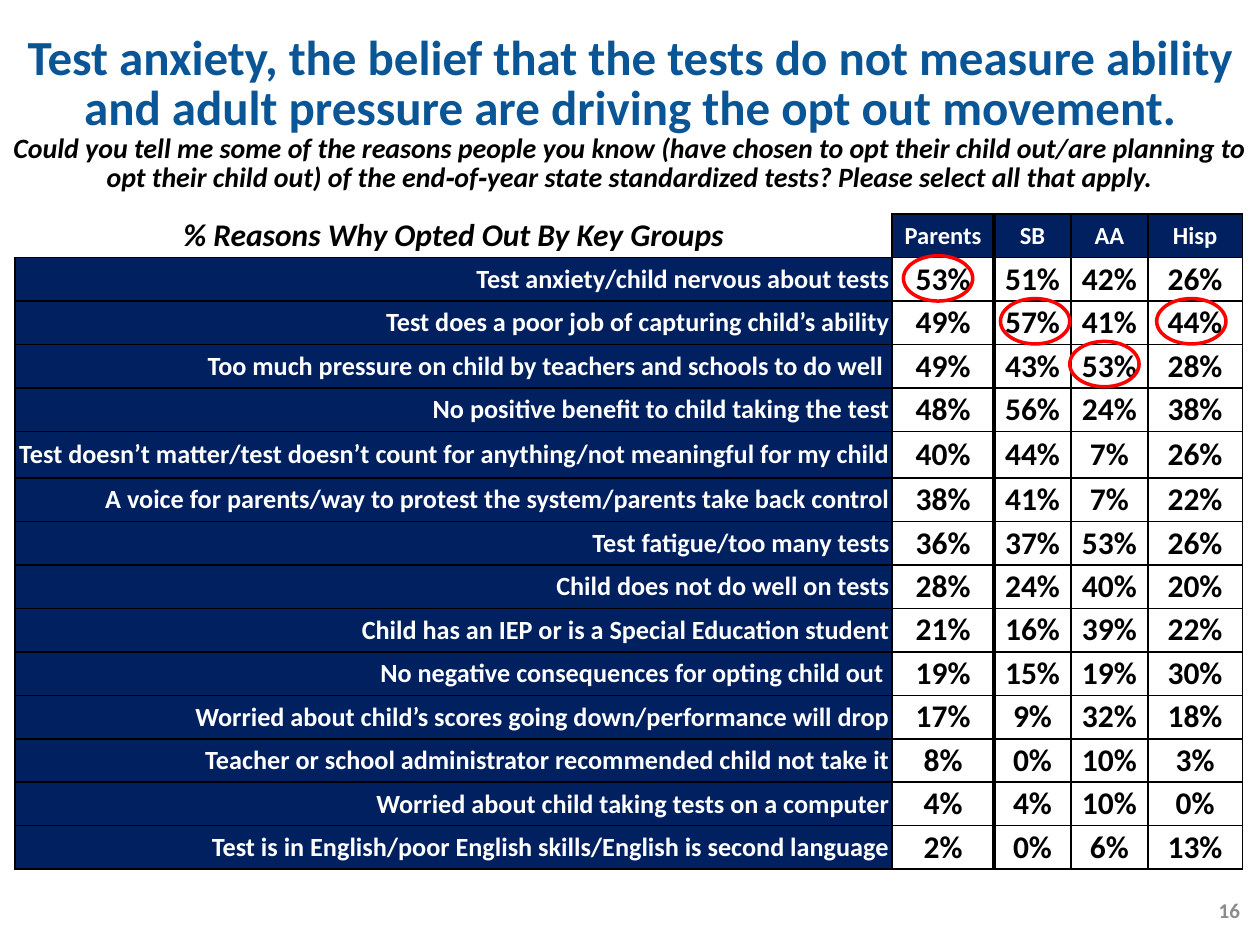
from lxml import etree
from pptx import Presentation
from pptx import util as u
from pptx.dml.color import RGBColor
from pptx.enum import shapes, text
from pptx.oxml import ns

Inches = u.Inches
COLORS = {"navy": "002060", "title": "095595", "black": "000000",
          "white": "FFFFFF", "red": "FF0000", "gray": "8C8C8C"}
CENTER, RIGHT = text.PP_ALIGN.CENTER, text.PP_ALIGN.RIGHT
MIDDLE, TOP = text.MSO_ANCHOR.MIDDLE, text.MSO_ANCHOR.TOP

GROUPS = ["Parents", "SB", "AA", "Hisp"]
REASONS = [
    ("Test anxiety/child nervous about tests", 53, 51, 42, 26),
    ("Test does a poor job of capturing child’s ability", 49, 57, 41, 44),
    ("Too much pressure on child by teachers and schools to do well ", 49, 43, 53, 28),
    ("No positive benefit to child taking the test", 48, 56, 24, 38),
    ("Test doesn’t matter/test doesn’t count for anything/not meaningful for my child",
     40, 44, 7, 26),
    ("A voice for parents/way to protest the system/parents take back control",
     38, 41, 7, 22),
    ("Test fatigue/too many tests", 36, 37, 53, 26),
    ("Child does not do well on tests", 28, 24, 40, 20),
    ("Child has an IEP or is a Special Education student", 21, 16, 39, 22),
    ("No negative consequences for opting child out ", 19, 15, 19, 30),
    ("Worried about child’s scores going down/performance will drop", 17, 9, 32, 18),
    ("Teacher or school administrator recommended child not take it", 8, 0, 10, 3),
    ("Worried about child taking tests on a computer", 4, 4, 10, 0),
    ("Test is in English/poor English skills/English is second language", 2, 0, 6, 13),
]


def write(tf, words, size, color, align, spacing=1.0, italic=False):
    p = tf.paragraphs[0]
    p.alignment, p.line_spacing = align, spacing
    r = p.add_run()
    r.text = words
    font = {"name": "Calibri", "size": u.Pt(size), "bold": True, "italic": italic}
    for key, value in font.items():
        setattr(r.font, key, value)
    r.font.color.rgb = RGBColor.from_string(COLORS[color])


def add_borders(cell, widths):
    """Draw black cell edges; widths maps L, R, T, B to points."""
    tc_pr = cell._tc.get_or_add_tcPr()
    for side, width in widths.items():
        ln = etree.SubElement(tc_pr, ns.qn(f"a:ln{side}"), w=str(u.Pt(width)))
        fill = etree.SubElement(ln, ns.qn("a:solidFill"))
        etree.SubElement(fill, ns.qn("a:srgbClr"), val=COLORS["black"])


prs = Presentation()
prs.slide_width, prs.slide_height = Inches(10), Inches(7.5)
s = prs.slides.add_slide(prs.slide_layouts[5])

# Reasons table
rows = [("% Reasons Why Opted Out By Key Groups", *GROUPS)]
rows += [(label, *(f"{v}%" for v in values)) for label, *values in REASONS]
table = s.shapes.add_table(len(rows), 5, Inches(0.12), Inches(1.7),
                           Inches(9.74), Inches(4.83)).table
table.first_row = table.horz_banding = False
for column, width in zip(table.columns, [6.96, 0.81, 0.61, 0.61, 0.75]):
    column.width = Inches(width)
for row in table.rows:
    row.height = Inches(0.32)
table.rows[5].height = Inches(0.37)
table.rows[7].height = Inches(0.3)

for i, row in enumerate(rows):
    for j, words in enumerate(row):
        cell = table.cell(i, j)
        cell.vertical_anchor = MIDDLE
        for side in ("left", "right", "top", "bottom"):
            setattr(cell, f"margin_{side}", Inches(0.02))
        corner = i == 0 and j == 0
        edges = {"L": 3 if j == 2 else 1, "R": 3 if j == 1 else 1, "T": 1, "B": 1}
        add_borders(cell, {"R": 1, "B": 1} if corner else edges)
        if not corner and (i == 0 or j == 0):
            cell.fill.solid()
            cell.fill.fore_color.rgb = RGBColor.from_string(COLORS["navy"])
        else:
            cell.fill.background()
        if corner:
            write(cell.text_frame, words, 18, "black", CENTER, italic=True)
        elif i == 0:
            write(cell.text_frame, words, 14, "white", CENTER, 0.9)
        elif j == 0:
            write(cell.text_frame, words, 15, "white", RIGHT, 0.95)
        else:
            write(cell.text_frame, words, 18, "black", CENTER)

# Title, survey question and slide number
title = s.shapes.title
title.left, title.top, title.width, title.height = map(Inches, (0, 0.23, 10, 1.25))
question = s.shapes.add_textbox(Inches(0), Inches(1.03), Inches(10), Inches(0.56))
number = s.shapes.add_textbox(Inches(7.61), Inches(7.02), Inches(2.33), Inches(0.4))
for sp, anchor in ((title, TOP), (question, TOP), (number, MIDDLE)):
    tf = sp.text_frame
    frame = {"word_wrap": True, "auto_size": text.MSO_AUTO_SIZE.NONE,
             "vertical_anchor": anchor}
    for key, value in frame.items():
        setattr(tf, key, value)
question.text_frame.margin_left = question.text_frame.margin_right = Inches(0.08)
write(title.text_frame, "Test anxiety, the belief that the tests do not measure ability "
      "and adult pressure are driving the opt out movement.", 28, "title", CENTER, 0.85)
write(question.text_frame, "Could you tell me some of the reasons people you know (have chosen "
      "to opt their child out/are planning to opt their child out) of the end‐of‐year state "
      "standardized tests? Please select all that apply.", 16, "black", CENTER, 0.85, True)
write(number.text_frame, "16", 12, "gray", RIGHT)

# Rings around each group's top reason: left edge and reason row
for left, reason in ((7.17, 0), (7.94, 1), (8.49, 2), (9.18, 1)):
    ring = s.shapes.add_shape(shapes.MSO_SHAPE.OVAL, Inches(left),
                              Inches(2.03 + 0.34 * reason), Inches(0.55), Inches(0.36))
    ring.shadow.inherit = False
    ring.fill.background()
    ring.line.color.rgb = RGBColor.from_string(COLORS["red"])
    ring.line.width = u.Pt(2)

prs.save("out.pptx")
